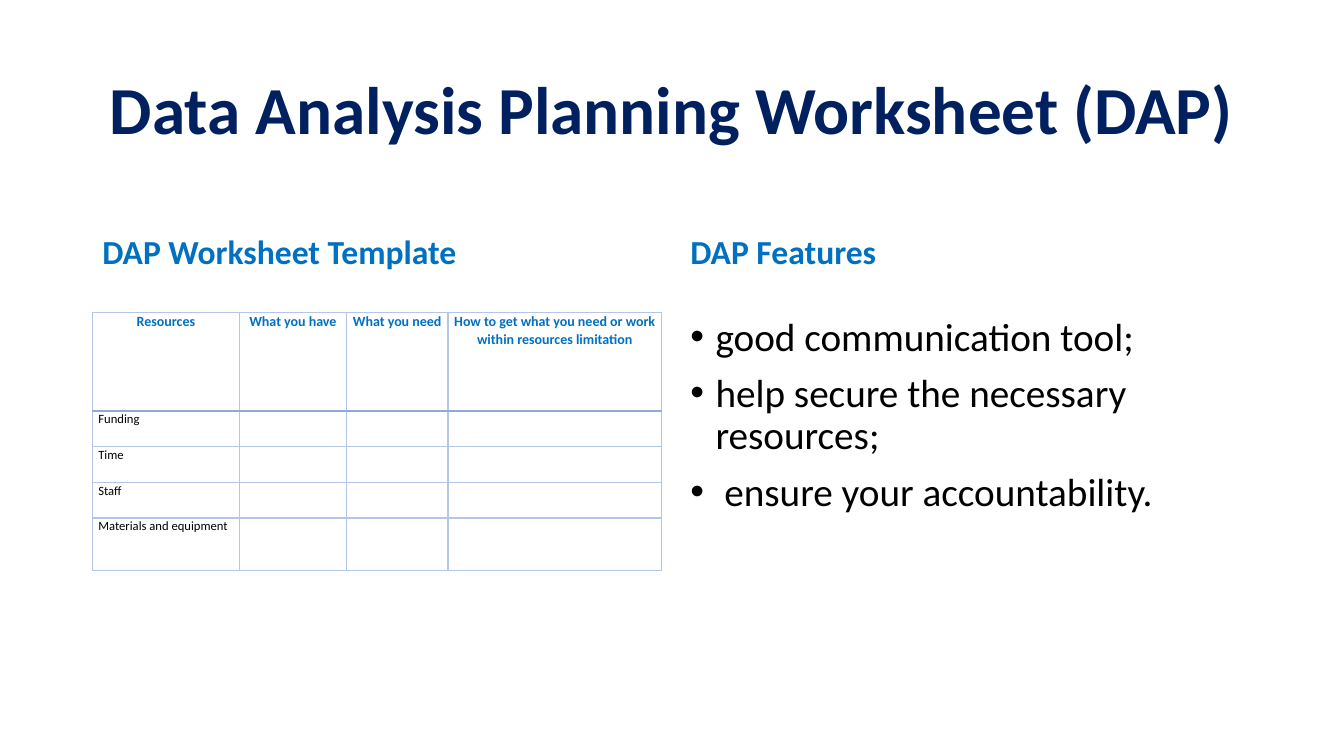
from dataclasses import dataclass

from lxml.etree import SubElement
from pptx import Presentation
from pptx.dml.color import RGBColor
from pptx.enum.text import MSO_ANCHOR, PP_ALIGN
from pptx.oxml.ns import qn
from pptx.util import Pt

LEFT, CENTER = PP_ALIGN.LEFT, PP_ALIGN.CENTER
TOP, MIDDLE, BOTTOM = MSO_ANCHOR.TOP, MSO_ANCHOR.MIDDLE, MSO_ANCHOR.BOTTOM


@dataclass(frozen=True)
class Theme:
    """Font, colours and type sizes of the slide."""
    font: str = "Calibri"
    navy: str = "002060"
    blue: str = "0070C0"
    black: str = "000000"
    grid: str = "B4C6E7"
    rule: str = "8EAADB"
    title: int = 48
    head: int = 24
    body: int = 28
    label: int = 10
    cell: int = 9


THEME = Theme()
HEADS = ["Resources", "What you have", "What you need",
         "How to get what you need or work within resources limitation"]
ITEMS = ["Funding", "Time", "Staff", "Materials and equipment"]
POINTS = ["good communication tool;", "help secure the necessary resources;",
          " ensure your accountability."]
COLS = [105, 76.5, 72.5, 152.5]
ROWS = [70.5, 25.5, 25.5, 25.5, 37.5]


def style(para, size, color, bold=False, align=LEFT, line=0.9, before=0):
    """Set the type and spacing of one paragraph."""
    font = para.font
    font.name, font.size, font.bold = THEME.font, Pt(size), bold
    font.color.rgb = RGBColor.from_string(color)
    para.alignment, para.line_spacing = align, line
    para.space_before = Pt(before)


def add_text(slide, box, lines, anchor, **look):
    """Add a wrapped text box and return its paragraphs."""
    frame = slide.shapes.add_textbox(*map(Pt, box)).text_frame
    frame.word_wrap, frame.vertical_anchor = True, anchor
    frame.text = "\n".join(lines)
    for para in frame.paragraphs:
        style(para, **look)
    return frame.paragraphs


def add_bullet(para):
    """Give a paragraph a hanging bullet."""
    props = para._p.get_or_add_pPr()
    props.set("marL", str(Pt(18)))
    props.set("indent", str(Pt(-18)))
    font = props.find(qn("a:defRPr"))
    for tag, key, value in (("a:buFont", "typeface", "Arial"),
                            ("a:buChar", "char", "•")):
        mark = SubElement(props, qn(tag))
        mark.set(key, value)
        font.addprevious(mark)


def add_edge(cell, side, color, width):
    """Draw one border of a table cell."""
    line = SubElement(cell._tc.get_or_add_tcPr(), qn(f"a:ln{side}"))
    line.set("w", str(Pt(width)))
    fill = SubElement(line, qn("a:solidFill"))
    SubElement(fill, qn("a:srgbClr")).set("val", color)


def fill_cell(cell, text, row):
    """Write a cell and set its margins, borders and fill."""
    cell.margin_left = cell.margin_right = Pt(4.3)
    cell.margin_top = cell.margin_bottom = Pt(0)
    cell.text = text
    para = cell.text_frame.paragraphs[0]
    if row == 0:
        style(para, THEME.label, THEME.blue, True, CENTER, 1.07)
    else:
        style(para, THEME.cell, THEME.black, line=1.07)
    heavy = {0: "B", 1: "T"}.get(row)
    for side in "LRTB":
        if side == heavy:
            add_edge(cell, side, THEME.rule, 1.5)
        else:
            add_edge(cell, side, THEME.grid, 1)
    cell.fill.background()


def add_sheet(slide, left, top):
    """Add the worksheet table."""
    table = slide.shapes.add_table(
        len(ROWS), len(COLS), Pt(left), Pt(top),
        Pt(sum(COLS)), Pt(sum(ROWS))).table
    table.first_row = table.horz_banding = False
    for col, width in zip(table.columns, COLS):
        col.width = Pt(width)
    for row, height in zip(table.rows, ROWS):
        row.height = Pt(height)
    data = [HEADS] + [[item, "", "", ""] for item in ITEMS]
    for r, texts in enumerate(data):
        for c, text in enumerate(texts):
            fill_cell(table.cell(r, c), text, r)


def main():
    """Build and save the slide."""
    deck = Presentation()
    deck.slide_width, deck.slide_height = Pt(960), Pt(540)
    slide = deck.slides.add_slide(deck.slide_layouts[6])
    add_text(slide, (66, 48, 828, 65),
             ["Data Analysis Planning Worksheet (DAP)"], MIDDLE,
             size=THEME.title, color=THEME.navy, bold=True, align=CENTER)
    for left, text in ((66, "DAP Worksheet Template"), (486, "DAP Features")):
        add_text(slide, (left, 132.5, 408, 65), [text], BOTTOM,
                 size=THEME.head, color=THEME.blue, bold=True, before=10)
    add_sheet(slide, 66, 223)
    for para in add_text(slide, (486, 223, 408, 184.5), POINTS, TOP,
                         size=THEME.body, color=THEME.black, before=10):
        add_bullet(para)
    deck.save("out.pptx")


if __name__ == "__main__":
    main()
